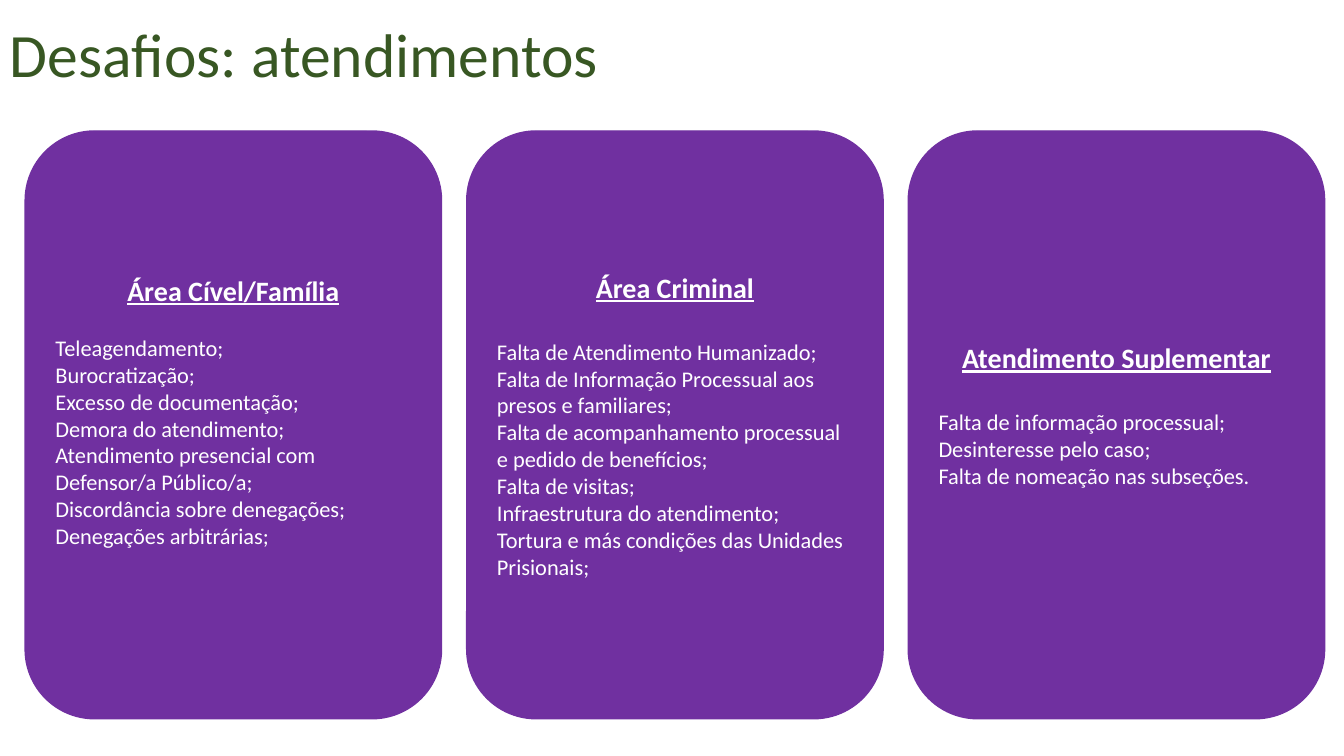
from pptx import Presentation
from pptx.util import Pt
from pptx.dml.color import RGBColor as Rgb
from pptx.enum.shapes import MSO_SHAPE as Shape
from pptx.enum.text import MSO_ANCHOR as Anchor, PP_ALIGN as Align

TITLE = "Desafios: atendimentos"
CARDS = [
    {"head": "Área Cível/Família", "gap": 19.5, "lift": 19.5, "items": [
        "Teleagendamento;",
        "Burocratização;",
        "Excesso de documentação;",
        "Demora do atendimento;",
        "Atendimento presencial com Defensor/a Público/a;",
        "Discordância sobre denegações;",
        "Denegações arbitrárias;",
    ]},
    {"head": "Área Criminal", "gap": 24.4, "lift": 0, "items": [
        "Falta de Atendimento Humanizado;",
        "Falta de Informação Processual aos presos e familiares;",
        "Falta de acompanhamento processual e pedido de benefícios;",
        "Falta de visitas;",
        "Infraestrutura do atendimento;",
        "Tortura e más condições das Unidades Prisionais;",
    ]},
    {"head": "Atendimento Suplementar", "gap": 24.4, "lift": 14.6, "items": [
        "Falta de informação processual;",
        "Desinteresse pelo caso;",
        "Falta de nomeação nas subseções.",
    ]},
]
THEME = {
    "font": "Calibri",
    "green": Rgb.from_string("385723"),
    "purple": Rgb.from_string("7030A0"),
    "white": Rgb.from_string("FFFFFF"),
    "title": 44, "head": 20, "item": 16,
}
LEFT, TOP, WIDE, HIGH, GAP = 18, 93.6, 297.4, 419.8, 18
INSET = 3.6


def style(para, size, color, bold=False):
    for run in para.runs:
        font = run.font
        font.name = THEME["font"]
        font.size = Pt(THEME[size])
        font.color.rgb = THEME[color]
        font.bold = font.underline = bold


def add_title(slide):
    box = slide.shapes.add_textbox(Pt(0), Pt(-10.8), Pt(828), Pt(104.4))
    frame = box.text_frame
    frame.word_wrap = True
    frame.vertical_anchor = Anchor.MIDDLE
    frame.text = TITLE
    para = frame.paragraphs[0]
    para.line_spacing = 0.9
    style(para, "title", "green")


def add_card(slide, col, card):
    left = LEFT + col * (WIDE + GAP)
    box = slide.shapes.add_shape(
        Shape.ROUNDED_RECTANGLE, Pt(left), Pt(TOP), Pt(WIDE), Pt(HIGH))
    box.shadow.inherit = False
    box.fill.solid()
    box.fill.fore_color.rgb = THEME["purple"]
    box.line.color.rgb = THEME["purple"]
    box.line.width = Pt(1)
    frame = box.text_frame
    frame.word_wrap = True
    frame.vertical_anchor = Anchor.MIDDLE
    frame.margin_bottom = Pt(INSET + card["lift"])
    frame.text = "\n".join([card["head"], *card["items"]])
    head, *items = frame.paragraphs
    head.alignment = Align.CENTER
    head.space_after = Pt(card["gap"])
    style(head, "head", "white", True)
    for item in items:
        item.alignment = Align.LEFT
        style(item, "item", "white")


def main():
    deck = Presentation()
    deck.slide_width, deck.slide_height = Pt(960), Pt(540)
    slide = deck.slides.add_slide(deck.slide_layouts[6])
    add_title(slide)
    for col, card in enumerate(CARDS):
        add_card(slide, col, card)
    deck.save("out.pptx")


if __name__ == "__main__":
    main()
